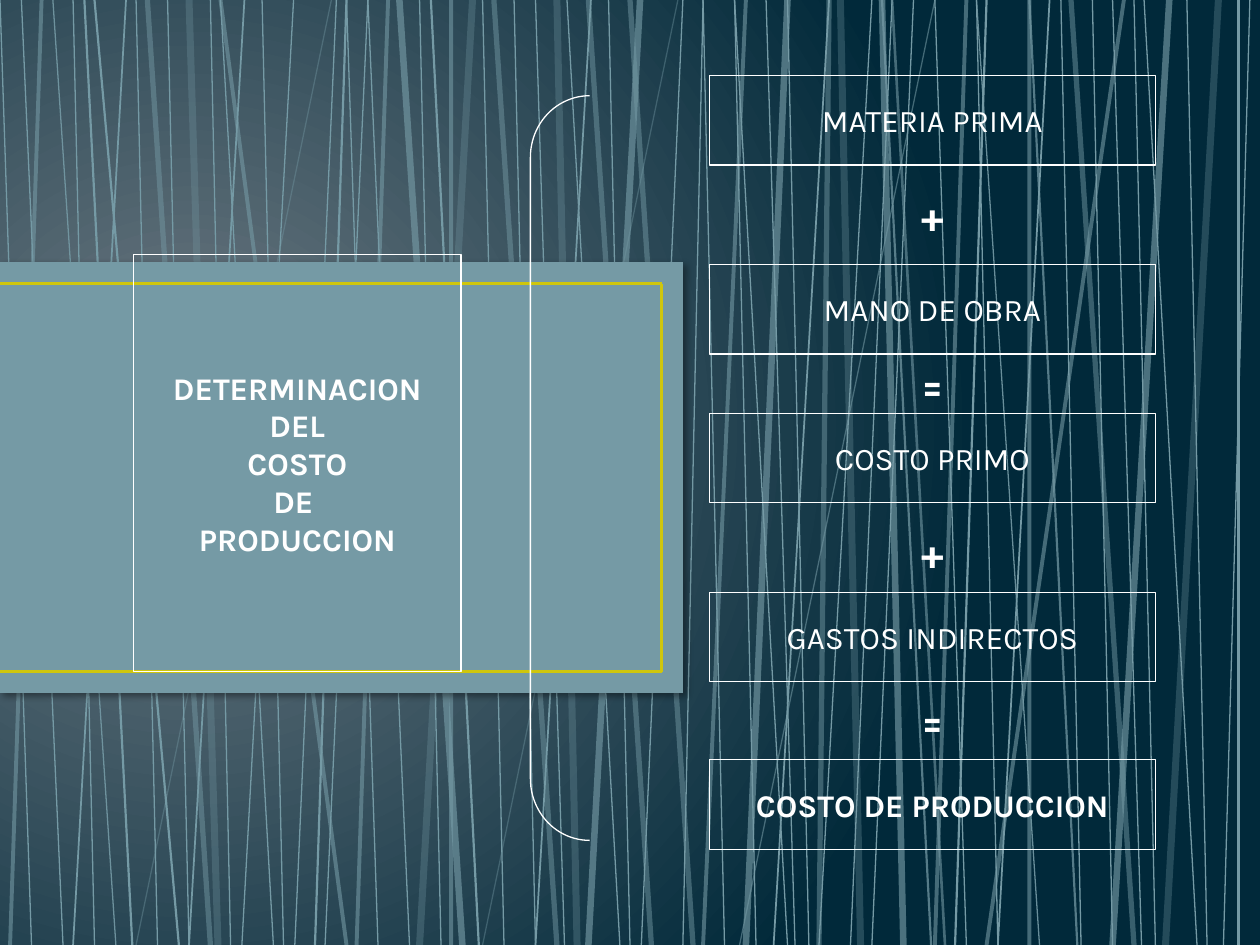
from lxml.etree import SubElement
from pptx import Presentation
from pptx.dml.color import RGBColor
from pptx.enum.shapes import MSO_CONNECTOR, MSO_SHAPE
from pptx.enum.text import MSO_ANCHOR, PP_ALIGN
from pptx.oxml.ns import qn
from pptx.util import Inches, Pt

WHITE = RGBColor(0xFF, 0xFF, 0xFF)
TEAL = RGBColor(0x75, 0x9A, 0xA5)
YELLOW = RGBColor(0xCF, 0xC6, 0x0D)
GLOW = RGBColor(0x71, 0x7C, 0x84)
NAVY = RGBColor(0x01, 0x29, 0x3A)
FONT = "Karla"
HEIGHT = 7.5

# Background threads: (width in pt, opacity %) -> x at the top and at the bottom
THREADS = {
    (4, 30): [(1.5, 1.73), (3.75, 3.33), (4.42, 4.58), (6.67, 6.83), (9.67, 9.25)],
    (3, 47): [(1.17, 1.67), (3.92, 4.42), (4.67, 5.17), (8.5, 9), (6.58, 6.5),
              (5, 5.5)],
    (3.75, 63): [(5.08, 4.67), (3.17, 3.67), (9.28, 8.83), (7, 7.17), (6.25, 5.92)],
    (2.25, 58): [(0.33, 0.08), (1.75, 2.75), (3.08, 2.83), (3.58, 3.58), (5.92, 5.58),
                 (7.67, 7.42), (8.17, 8.17), (8.92, 7.83)],
    (1.5, 58): [(7.08, 7.5)],
    (1.25, 72): [(8.17, 8.55), (7, 7.39)],
    (1.25, 100): [(0.75, 1.42), (0.67, 1.05), (2.75, 2.5), (3.42, 3.8), (7.83, 7.58),
                  (9.83, 9.83)],
    (1, 100): [(1, 0.58), (1.94, 1.5), (4.69, 4.25), (6.58, 6.14), (8.33, 7.92)],
    (0.75, 90): [(0.42, 0.92), (7.75, 8.25)],
    (0.75, 56): [(7.42, 5.87)],
    (0.75, 39): [(2.63, 1.08), (5.38, 3.83)],
    (0.75, 100): [
        (2.08, 2.25), (1.75, 2.17), (2.33, 1.92), (0, 0.25), (0.17, 0.5), (1.67, 1.83),
        (0.58, 0.75), (2.67, 2.34), (2.92, 2.58), (1.08, 1.25), (1.33, 1.5), (4.83, 5),
        (4.5, 4.92), (2.75, 3), (2.92, 3.25), (3.33, 3.5), (5.42, 5.09), (5.58, 5.42),
        (4.25, 4.48), (3.83, 4), (4.08, 4.25), (5.83, 6.25), (6.92, 6.5), (6.25, 6.42),
        (7.25, 6.92), (7.08, 6.75), (6.08, 6.31), (5.58, 5.75), (5.83, 6), (7.42, 7.67),
        (7.75, 7.92), (8.42, 8.58), (8.67, 8.83), (9.42, 9.58), (9.08, 9.5), (9, 9.17),
        (9.92, 9.71), (8.83, 9.06)],
}

TITLE = ["DETERMINACION", "DEL", "COSTO", "DE ", "PRODUCCION"]

# Cost column: (top, text, bold)
COLUMN_X, COLUMN_W, BOX_H, SIGN_H = 5.63, 3.54, 0.71, 0.47
BOXES = [
    (0.6, "MATERIA PRIMA", False),
    (2.1, "MANO DE OBRA", False),
    (3.28, "COSTO PRIMO", False),
    (4.7, "GASTOS INDIRECTOS", False),
    (6.03, "COSTO DE PRODUCCION", True),
]
SIGNS = [(1.47, "+"), (2.81, "="), (4.14, "+"), (5.48, "=")]

prs = Presentation()
prs.slide_width, prs.slide_height = Inches(10), Inches(HEIGHT)
s = prs.slides.add_slide(prs.slide_layouts[6])


def add_line(x1, y1, x2, y2, color, width, opacity=100):
    c = s.shapes.add_connector(MSO_CONNECTOR.STRAIGHT, Inches(x1), Inches(y1),
                               Inches(x2), Inches(y2))
    c.line.color.rgb = color
    c.line.width = Pt(width)
    if opacity < 100:
        rgb = c.line.fill._xPr.find(".//" + qn("a:srgbClr"))
        SubElement(rgb, qn("a:alpha"), val=str(opacity * 1000))
    SubElement(c._element.spPr, qn("a:effectLst"))


def add_outline(kind, x, y, w, h):
    sp = s.shapes.add_shape(kind, Inches(x), Inches(y), Inches(w), Inches(h))
    sp.shadow.inherit = False
    sp.fill.background()
    sp.line.color.rgb = WHITE
    sp.line.width = Pt(0.75)
    return sp


def write(sp, lines, size, bold):
    tf = sp.text_frame
    tf.word_wrap = False
    tf.vertical_anchor = MSO_ANCHOR.MIDDLE
    for i, text in enumerate(lines):
        p = tf.add_paragraph() if i else tf.paragraphs[0]
        p.alignment = PP_ALIGN.CENTER
        r = p.add_run()
        r.text = text
        r.font.name, r.font.size, r.font.bold = FONT, Pt(size), bold
        r.font.color.rgb = WHITE


# Radial background
fill = s.background.fill
fill.gradient()
for stop, color in zip(fill.gradient_stops, (GLOW, NAVY)):
    stop.color.rgb = color
grad = s.element.find(".//" + qn("a:gradFill"))
grad.remove(grad.find(qn("a:lin")))
circle = SubElement(grad, qn("a:path"), path="circle")
SubElement(circle, qn("a:fillToRect"), l="15000", t="50000", r="85000", b="60000")

# Threads
for (width, opacity), ends in THREADS.items():
    for top_x, bottom_x in ends:
        add_line(top_x, 0, bottom_x, HEIGHT, TEAL, width, opacity)

# Title band with its shadow and yellow frame
band = s.shapes.add_shape(MSO_SHAPE.RECTANGLE, 0, Inches(2.08), Inches(5.42), Inches(3.42))
band.shadow.inherit = False
band.fill.solid()
band.fill.fore_color.rgb = TEAL
band.line.fill.background()
shadow = SubElement(band._element.spPr.find(qn("a:effectLst")), qn("a:outerShdw"),
                    blurRad=str(Pt(4)), dist=str(Pt(3)), dir=str(45 * 60000),
                    algn="tl", rotWithShape="0")
black = SubElement(shadow, qn("a:srgbClr"), val="000000")
SubElement(black, qn("a:alpha"), val="40000")

for frame_side in [(0, 2.25, 5.25, 2.25), (0, 5.33, 5.25, 5.33), (5.25, 2.25, 5.25, 5.33)]:
    add_line(*frame_side, YELLOW, 1.5)

# Title box
write(add_outline(MSO_SHAPE.RECTANGLE, 1.06, 2.02, 2.6, 3.31), TITLE, 18, True)

# Cost boxes and the signs between them
for y, text, bold in BOXES:
    write(add_outline(MSO_SHAPE.RECTANGLE, COLUMN_X, y, COLUMN_W, BOX_H), [text], 18, bold)
for y, sign in SIGNS:
    tb = s.shapes.add_textbox(Inches(COLUMN_X), Inches(y), Inches(COLUMN_W), Inches(SIGN_H))
    write(tb, [sign], 24, True)

# Bracket
bracket = add_outline(MSO_SHAPE.LEFT_BRACKET, 4.21, 0.76, 0.47, 5.91)
bracket.adjustments[0] = 1.04

prs.save("out.pptx")
